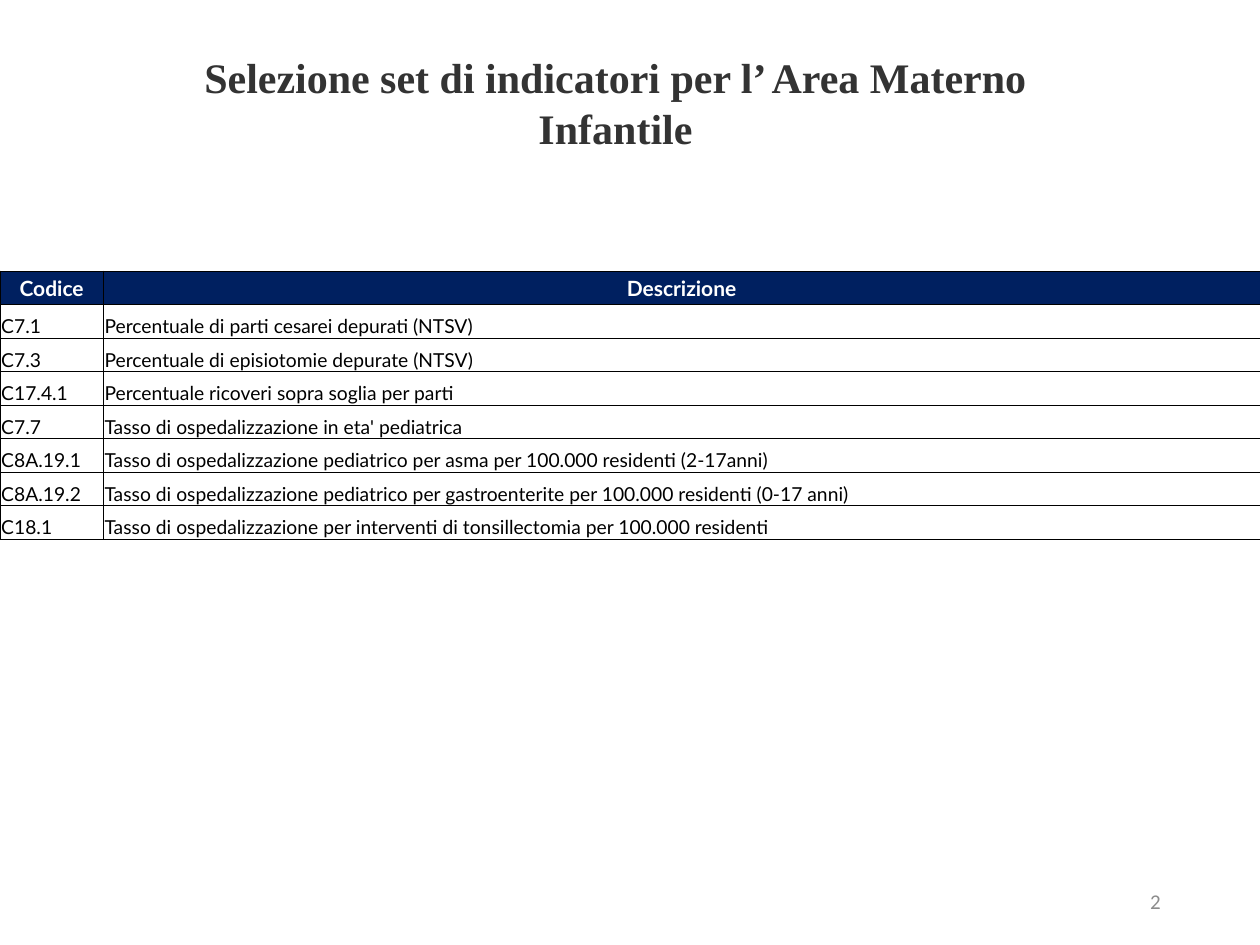
from lxml.etree import SubElement
from pptx import Presentation
from pptx.dml.color import RGBColor
from pptx.enum.text import MSO_ANCHOR, MSO_AUTO_SIZE, PP_ALIGN
from pptx.oxml.ns import qn
from pptx.util import Inches, Pt

COLORS = {
    "navy": "002060",
    "white": "FFFFFF",
    "black": "000000",
    "title": "333333",
    "number": "8C8C8C",
}

HEADERS = ("Codice", "Descrizione")
INDICATORS = [
    ("C7.1", "Percentuale di parti cesarei depurati (NTSV)"),
    ("C7.3", "Percentuale di episiotomie depurate (NTSV)"),
    ("C17.4.1", "Percentuale ricoveri sopra soglia per parti"),
    ("C7.7", "Tasso di ospedalizzazione in eta' pediatrica"),
    ("C8A.19.1", "Tasso di ospedalizzazione pediatrico per asma per 100.000 residenti (2-17anni)"),
    ("C8A.19.2", "Tasso di ospedalizzazione pediatrico per gastroenterite per 100.000 residenti (0-17 anni)"),
    ("C18.1", "Tasso di ospedalizzazione per interventi di tonsillectomia per 100.000 residenti"),
]


class SlideBuilder:
    title_font = "Times New Roman"
    table_font = "Lato"
    number_font = "Calibri"

    def __init__(self, page):
        self.page = page

    def add_text(self, frame, text, font, size, color, bold=False, align=PP_ALIGN.LEFT):
        para = frame.paragraphs[0]
        para.alignment = align
        span = para.add_run()
        span.text = text
        span.font.name = font
        span.font.size = Pt(size)
        span.font.bold = bold
        span.font.color.rgb = RGBColor.from_string(COLORS[color])

    def title(self, text, left, top, width, height):
        box = self.page.shapes.title
        box.left, box.top = Inches(left), Inches(top)
        box.width, box.height = Inches(width), Inches(height)
        frame = box.text_frame
        frame.word_wrap = True
        frame.auto_size = MSO_AUTO_SIZE.NONE
        frame.vertical_anchor = MSO_ANCHOR.TOP
        self.add_text(frame, text, self.title_font, 24, "title", True, PP_ALIGN.CENTER)

    def borders(self, cell):
        properties = cell._tc.get_or_add_tcPr()
        for position, side in enumerate(("a:lnL", "a:lnR", "a:lnT", "a:lnB")):
            line = SubElement(properties, qn(side), w=str(Pt(0.5)))
            fill = SubElement(line, qn("a:solidFill"))
            SubElement(fill, qn("a:srgbClr"), val=COLORS["black"])
            properties.insert(position, line)

    def cell(self, cell, text, header):
        cell.margin_left = cell.margin_right = cell.margin_top = Inches(0.01)
        cell.margin_bottom = 0
        if header:
            cell.fill.solid()
            cell.fill.fore_color.rgb = RGBColor.from_string(COLORS["navy"])
            cell.vertical_anchor = MSO_ANCHOR.MIDDLE
            self.add_text(cell.text_frame, text, self.table_font, 12, "white", True, PP_ALIGN.CENTER)
        else:
            cell.fill.background()
            cell.vertical_anchor = MSO_ANCHOR.BOTTOM
            self.add_text(cell.text_frame, text, self.table_font, 11, "black")
        self.borders(cell)

    def table(self, records, left, top, widths, height):
        table = self.page.shapes.add_table(
            len(records), len(widths), Inches(left), Inches(top),
            Inches(sum(widths)), Inches(height),
        ).table
        for column, width in zip(table.columns, widths):
            column.width = Inches(width)
        for row_index, record in enumerate(records):
            for column_index, text in enumerate(record):
                self.cell(table.cell(row_index, column_index), text, row_index == 0)

    def page_number(self, text, left, top, width, height):
        box = self.page.shapes.add_textbox(
            Inches(left), Inches(top), Inches(width), Inches(height)
        )
        frame = box.text_frame
        frame.word_wrap = True
        frame.vertical_anchor = MSO_ANCHOR.MIDDLE
        self.add_text(frame, text, self.number_font, 12, "number", align=PP_ALIGN.RIGHT)


def main():
    deck = Presentation()
    deck.slide_width, deck.slide_height = Inches(10), Inches(7.5)
    builder = SlideBuilder(deck.slides.add_slide(deck.slide_layouts[5]))
    builder.table([HEADERS, *INDICATORS], 0, 2.15, (0.82, 9.18), 2.13)
    builder.title("Selezione set di indicatori per l’ Area Materno Infantile", 0.92, 0.36, 7.93, 0.5)
    builder.page_number("2", 7.06, 6.95, 2.25, 0.4)
    deck.save("out.pptx")


if __name__ == "__main__":
    main()
